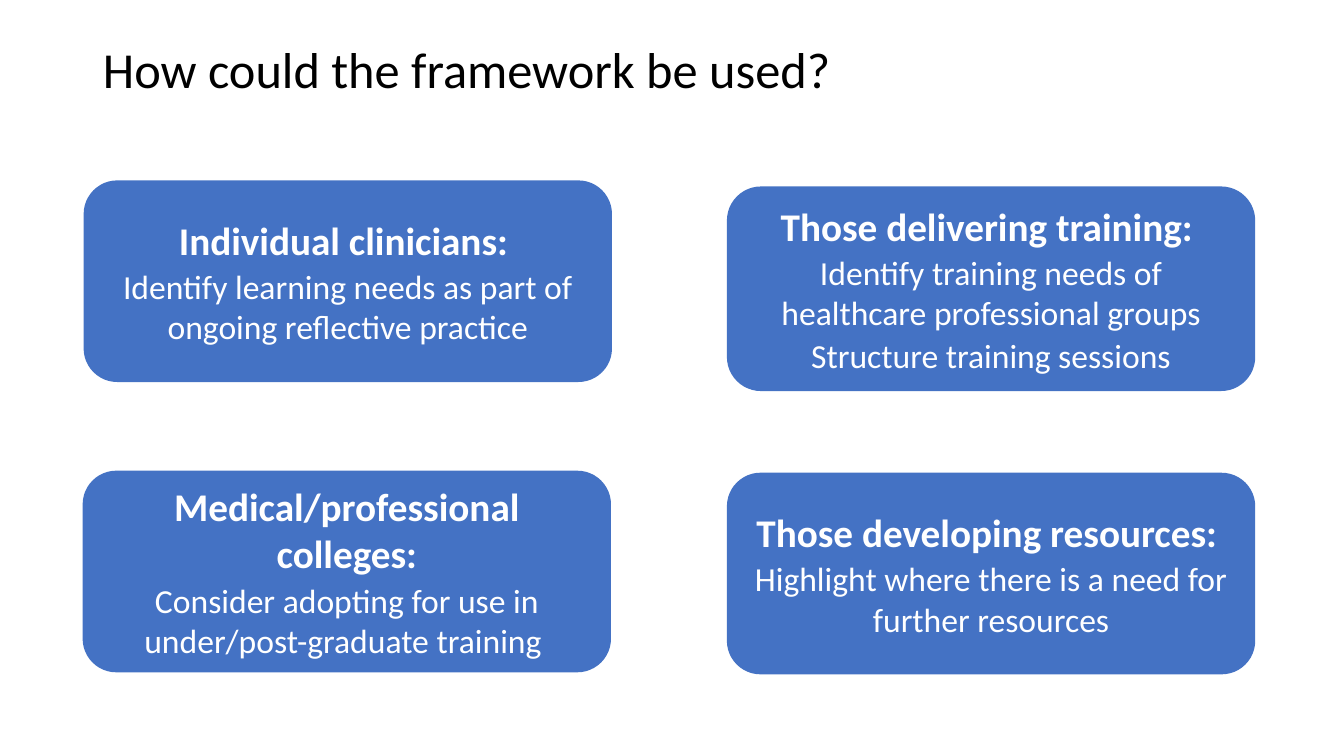
from pptx import Presentation
from pptx.dml.color import RGBColor
from pptx.enum import shapes, text
from pptx.util import Inches, Pt

BLUE = RGBColor(0x44, 0x72, 0xC4)
WHITE = RGBColor(0xFF, 0xFF, 0xFF)
BLACK = RGBColor(0, 0, 0)


def write(p, words, size, color, bold=False, align=None, after=0, spacing=1.0):
    p.alignment = align
    p.space_before = Pt(0)
    p.space_after = Pt(after)
    p.line_spacing = spacing
    r = p.add_run()
    r.text = words
    r.font.name = "Calibri"
    r.font.size = Pt(size)
    r.font.bold = bold
    r.font.color.rgb = color


prs = Presentation()
prs.slide_width = Inches(13.33)
prs.slide_height = Inches(7.5)
s = prs.slides.add_slide(prs.slide_layouts[5])

title = s.shapes.title
title.left, title.top = Inches(0.92), Inches(0.4)
title.width, title.height = Inches(11.5), Inches(1.45)
tf = title.text_frame
tf.word_wrap = True
tf.vertical_anchor = text.MSO_ANCHOR.TOP
write(tf.paragraphs[0], "How could the framework be used?", 36, BLACK,
      align=text.PP_ALIGN.LEFT, spacing=0.9)

# left, top, height, heading, body lines
audiences = [
    (0.83, 1.79, 2, "Individual clinicians: ",
     ["Identify learning needs as part of ongoing reflective practice"]),
    (0.82, 4.67, 2, "Medical/professional colleges:",
     ["Consider adopting for use in under/post-graduate training "]),
    (7.21, 1.85, 2.03, "Those delivering training: ",
     ["Identify training needs of healthcare professional groups",
      "Structure training sessions"]),
    (7.21, 4.69, 2, "Those developing resources: ",
     ["Highlight where there is a need for further resources"]),
]
for left, top, height, heading, uses in audiences:
    sp = s.shapes.add_shape(shapes.MSO_SHAPE.ROUNDED_RECTANGLE, Inches(left),
                            Inches(top), Inches(5.24), Inches(height))
    sp.shadow.inherit = False
    sp.fill.solid()
    sp.fill.fore_color.rgb = BLUE
    sp.line.fill.background()
    tf = sp.text_frame
    tf.word_wrap = True
    tf.vertical_anchor = text.MSO_ANCHOR.MIDDLE
    write(tf.paragraphs[0], heading, 28, WHITE, bold=True,
          align=text.PP_ALIGN.CENTER, after=2)
    for use in uses:
        write(tf.add_paragraph(), use, 24, WHITE,
              align=text.PP_ALIGN.CENTER, after=2)

prs.save("out.pptx")
